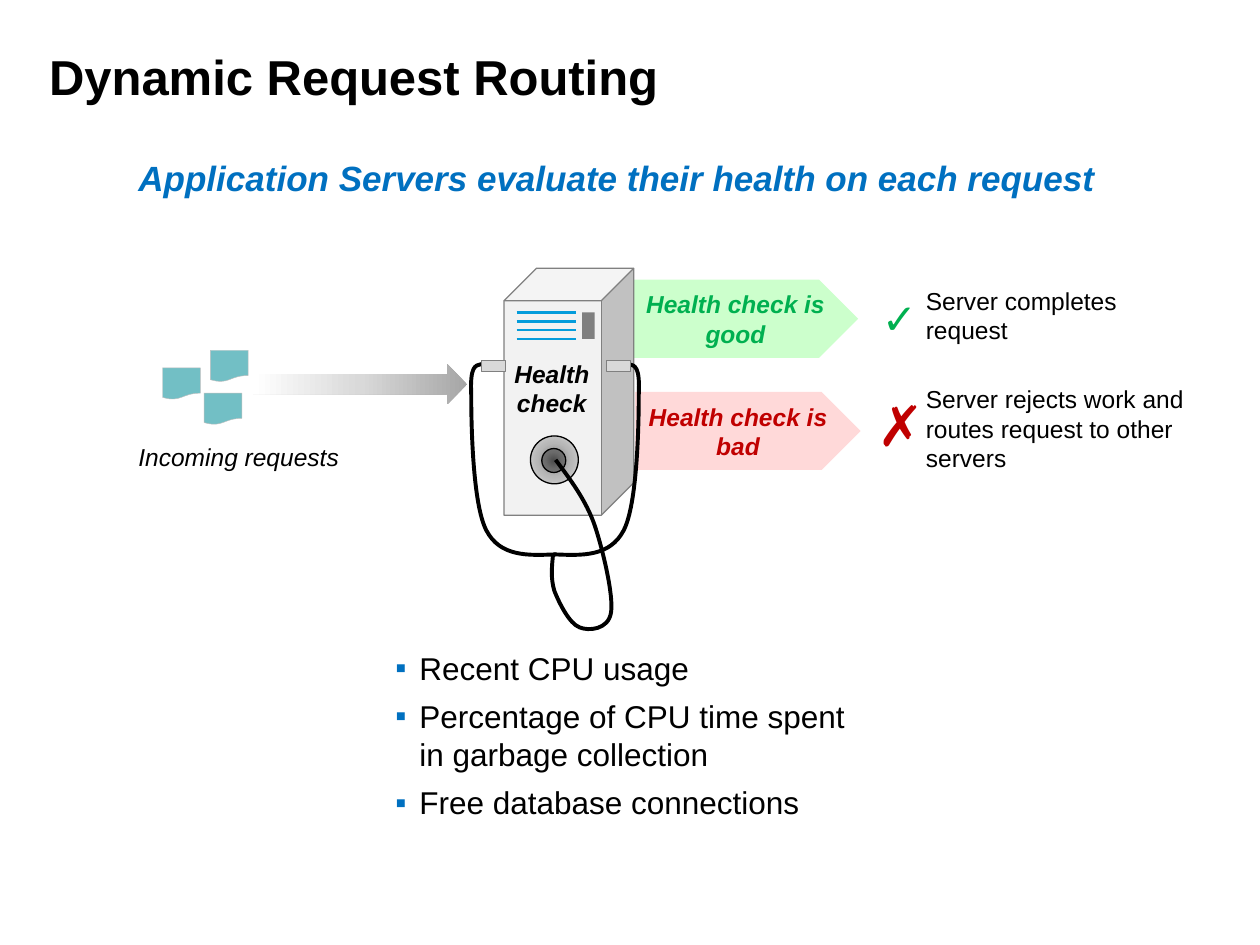
from lxml.etree import SubElement
from pptx import Presentation
from pptx.dml.color import RGBColor
from pptx.enum.shapes import MSO_CONNECTOR, MSO_SHAPE
from pptx.enum.text import MSO_ANCHOR, MSO_AUTO_SIZE, PP_ALIGN
from pptx.oxml.ns import qn
from pptx.util import Inches, Pt

COLORS = {
    "text": "000000", "accent": "0070C0", "good": "00B050", "bad": "C00000",
    "good_fill": "CCFFCC", "bad_fill": "FFD9D9", "server": "F2F2F2",
    "edge": "808080", "stripe": "049CDB", "document": "72BFC5",
    "document_edge": "BFBFBF", "earpiece": "D9D9D9",
}
ARROW_STOPS = ("A6A6A6", "D9D9D9", "FFFFFF")
DISC_STOPS = ("808080", "B7B7B7", "D9D9D9")
HUB_STOPS = ("4C4C4C", "6B6B6B", "808080")

EAR_TUBE = [(3.82, 2.89), (3.77, 2.9), (3.73, 2.91), (3.74, 3.13),
            (3.74, 3.35), (3.75, 4), (3.86, 4.21),
            (3.97, 4.42), (4.19, 4.41), (4.41, 4.4)]
CHEST_TUBE = [(4.39, 4.4), (4.38, 4.5), (4.37, 4.59), (4.4, 4.69),
              (4.44, 4.79), (4.52, 4.95), (4.6, 4.98),
              (4.67, 5.01), (4.83, 5), (4.85, 4.86),
              (4.87, 4.73), (4.79, 4.38), (4.72, 4.17),
              (4.65, 3.97), (4.53, 3.81), (4.41, 3.65)]
MIRROR_SUM = 8.81  # left x plus right x of the two ear tubes


def rgb(name):
    return RGBColor.from_string(COLORS[name])


def style_font(para, size, color="text", bold=False, italic=False):
    font = para.font
    font.name, font.size = "Arial", Pt(size)
    font.bold, font.italic = bold, italic
    font.color.rgb = rgb(color)


def set_indent(para, inches):
    props = para._p.get_or_add_pPr()
    props.set("marL", str(Inches(inches)))
    props.set("indent", str(-Inches(inches)))
    return props


def add_bullet(para):
    props = set_indent(para, 0.19)
    color = SubElement(props, qn("a:buClr"))
    SubElement(color, qn("a:srgbClr"), val=COLORS["accent"])
    SubElement(props, qn("a:buFont"), typeface="Arial")
    SubElement(props, qn("a:buChar"), char="▪")
    para.space_after = Pt(6)


def add_text(page, place, lines, size, align=PP_ALIGN.LEFT, bullets=False,
             wrap=True, **look):
    frame = page.shapes.add_textbox(*map(Inches, place)).text_frame
    frame.word_wrap = wrap
    frame.auto_size = MSO_AUTO_SIZE.SHAPE_TO_FIT_TEXT
    frame.text = "\n".join(lines)
    for para in frame.paragraphs:
        para.alignment = align
        if bullets:
            add_bullet(para)
        style_font(para, size, **look)


def add_shape(parent, kind, place, fill=None, line=None, width=0.75):
    shape = parent.shapes.add_shape(kind, *map(Inches, place))
    shape.shadow.inherit = False
    if fill:
        shape.fill.solid()
        shape.fill.fore_color.rgb = rgb(fill)
    if line:
        shape.line.color.rgb = rgb(line)
        shape.line.width = Pt(width)
    else:
        shape.line.fill.background()
    return shape


def fill_gradient(shape, stops, angle=None):
    """Fill with evenly spaced stops: linear at an angle, else from the centre."""
    shape.fill.gradient()
    gradient = shape._element.spPr.find(qn("a:gradFill"))
    for child in list(gradient):
        gradient.remove(child)
    stop_list = SubElement(gradient, qn("a:gsLst"))
    for index, color in enumerate(stops):
        position = 100000 * index // (len(stops) - 1)
        stop = SubElement(stop_list, qn("a:gs"), pos=str(position))
        SubElement(stop, qn("a:srgbClr"), val=color)
    if angle is not None:
        SubElement(gradient, qn("a:lin"), ang=str(angle * 60000), scaled="0")
    else:
        centre = SubElement(gradient, qn("a:path"), path="circle")
        SubElement(centre, qn("a:fillToRect"),
                   dict.fromkeys("ltrb", "50000"))


def add_tube(page, points):
    """Draw a start point followed by triples of cubic Bezier points."""
    start_point, *controls = [(Inches(x), Inches(y)) for x, y in points]
    builder = page.shapes.build_freeform(*start_point)
    builder.add_line_segments(controls, close=False)
    tube = builder.convert_to_shape()
    outline = next(tube._element.iter(qn("a:path")))
    segments = outline.findall(qn("a:lnTo"))
    for start in range(0, len(segments), 3):
        curve = SubElement(outline, qn("a:cubicBezTo"))
        for segment in segments[start:start + 3]:
            curve.append(segment[0])
            outline.remove(segment)
    tube.shadow.inherit = False
    tube.fill.background()
    tube.line.color.rgb = rgb("text")
    tube.line.width = Pt(2.25)


def add_title(page, text):
    title = page.shapes.title
    title.left, title.top, title.width, title.height = map(
        Inches, (0.33, 0, 9, 1.2))
    frame = title.text_frame
    frame.text = text
    frame.vertical_anchor = MSO_ANCHOR.MIDDLE
    frame.margin_left = frame.margin_top = frame.margin_bottom = Inches(0.06)
    frame.margin_right = Inches(0.1)
    para = frame.paragraphs[0]
    para.alignment = PP_ALIGN.LEFT
    set_indent(para, 0.04)
    style_font(para, 28, bold=True)


def add_outcome(page, left, top, text, state):
    banner = add_shape(page, MSO_SHAPE.PENTAGON, (left, top, 1.79, 0.62),
                       state + "_fill")
    frame = banner.text_frame
    frame.text = text
    frame.word_wrap = True
    frame.vertical_anchor = MSO_ANCHOR.MIDDLE
    para = frame.paragraphs[0]
    para.alignment = PP_ALIGN.CENTER
    style_font(para, 14, state, bold=True, italic=True)


def add_server(page):
    add_shape(page, MSO_SHAPE.CUBE, (4, 2.13, 1.03, 1.96), "server", "edge")
    add_shape(page, MSO_SHAPE.RECTANGLE, (4.62, 2.48, 0.1, 0.21), "edge")
    stripes = page.shapes.add_group_shape()
    for row in range(4):
        y = Inches(2.48 + 0.07 * row)
        stripe = stripes.shapes.add_connector(
            MSO_CONNECTOR.STRAIGHT, Inches(4.1), y, Inches(4.57), y)
        stripe.line.color.rgb = rgb("stripe")
        stripe.line.width = Pt(1.5)
        SubElement(stripe._element.spPr, qn("a:effectLst"))


def add_stethoscope(page):
    add_tube(page, EAR_TUBE)
    add_tube(page, [(MIRROR_SUM - x, y) for x, y in EAR_TUBE])
    for left, top, size, stops in ((4.21, 3.46, 0.38, DISC_STOPS),
                                   (4.3, 3.56, 0.19, HUB_STOPS)):
        disc = add_shape(page, MSO_SHAPE.OVAL, (left, top, size, size),
                         line="text")
        fill_gradient(disc, stops)
    add_tube(page, CHEST_TUBE)
    for left in (3.82, 4.81):
        add_shape(page, MSO_SHAPE.RECTANGLE, (left, 2.86, 0.19, 0.09),
                  "earpiece", "edge", 0.25)


def add_requests(page):
    documents = page.shapes.add_group_shape()
    for left, top in ((1.67, 2.78), (1.62, 3.12), (1.29, 2.92)):
        add_shape(documents, MSO_SHAPE.FLOWCHART_DOCUMENT,
                  (left, top, 0.3, 0.25), "document", "document_edge", 0.25)
    add_text(page, (1, 3.46, 2.04, 0.34), ["Incoming requests"], 14,
             italic=True)


def main():
    deck = Presentation()
    deck.slide_width, deck.slide_height = Inches(10), Inches(7.5)
    page = deck.slides.add_slide(deck.slide_layouts[5])
    add_title(page, "Dynamic Request Routing")
    add_outcome(page, 5.04, 3.11, "Health check is bad", "bad")
    add_outcome(page, 5.02, 2.22, "Health check is good", "good")
    arrow = add_shape(page, MSO_SHAPE.RIGHT_ARROW, (2.01, 2.89, 1.7, 0.32))
    fill_gradient(arrow, ARROW_STOPS, 180)
    add_server(page)
    add_stethoscope(page)
    add_text(page, (3.95, 2.8, 0.86, 0.57), ["Health check"], 14,
             PP_ALIGN.CENTER, bold=True, italic=True)
    add_text(page, (3.04, 5.1, 3.81, 1.48),
             ["Recent CPU usage",
              "Percentage of CPU time spent in garbage collection",
              "Free database connections"], 18, bullets=True)
    add_requests(page)
    add_text(page, (1, 1.19, 7.85, 0.44),
             ["Application Servers evaluate their health on each request"],
             20, wrap=False, color="accent", bold=True, italic=True)
    add_text(page, (7.25, 3, 2.3, 0.81),
             ["Server rejects work and routes request to other servers"], 14)
    add_text(page, (7.25, 2.22, 2.3, 0.57), ["Server completes request"], 14)
    add_text(page, (6.9, 2.27, 0.47, 0.5), ["✓"], 24, color="good", bold=True)
    add_text(page, (6.87, 3.05, 0.47, 0.64), ["✗"], 32, color="bad", bold=True)
    deck.save("out.pptx")


if __name__ == "__main__":
    main()
